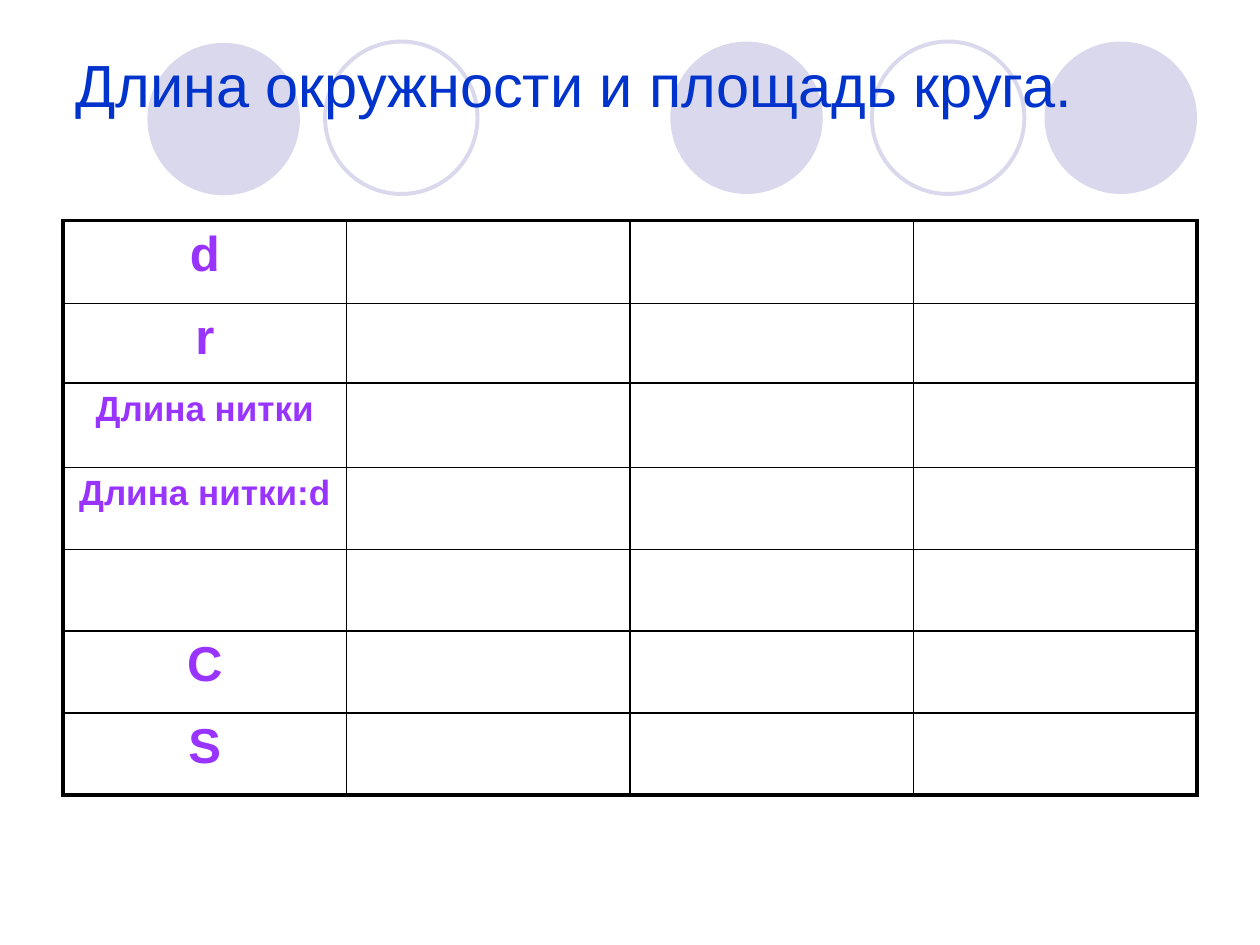
import pptx
import pptx.util
from pptx.dml.color import RGBColor
from pptx.enum.shapes import MSO_SHAPE
from pptx.enum.text import MSO_ANCHOR, PP_ALIGN
from pptx.oxml.ns import qn
from lxml import etree

Inches, Pt = pptx.util.Inches, pptx.util.Pt

# Content
TITLE = "Длина окружности и площадь круга."
ROWS = [  # label, font size, row height
    ("d", 28, 0.66),
    ("r", 28, 0.63),
    ("Длина нитки", 20, 0.67),
    ("Длина нитки:d", 20, 0.65),
    ("", 20, 0.65),
    ("C", 28, 0.65),
    ("S", 28, 0.65),
]
COLUMNS, COLUMN_WIDTH = 4, 2.25
CIRCLES = [  # left, top, filled
    (5.32, 0.33, True),
    (8.29, 0.33, True),
    (1.17, 0.34, True),
    (6.92, 0.33, False),
    (2.58, 0.33, False),
]
DIAMETER = 1.21

LILAC = RGBColor(0xD9, 0xD8, 0xEC)
BLUE = RGBColor(0x00, 0x33, 0xCC)
PURPLE = RGBColor(0x99, 0x33, 0xFF)
BLACK = RGBColor(0x00, 0x00, 0x00)
THIN, THICK = Pt(1), Pt(2.25)


def format_text(p, size, color, bold):
    p.font.color.rgb = color
    for name, value in {"name": "Arial", "size": Pt(size), "bold": bold}.items():
        setattr(p.font, name, value)


def set_borders(cell, widths):
    tcPr = cell._tc.get_or_add_tcPr()
    for i, (side, width) in enumerate(widths.items()):
        ln = etree.Element(qn("a:ln" + side), w=str(width))
        fill = etree.SubElement(ln, qn("a:solidFill"))
        etree.SubElement(fill, qn("a:srgbClr"), val=str(BLACK))
        tcPr.insert(i, ln)  # borders come before the cell fill


prs = pptx.Presentation()
prs.slide_width, prs.slide_height = Inches(10), Inches(7.5)
s = prs.slides.add_slide(prs.slide_layouts[5])

# Background circles
for left, top, filled in CIRCLES:
    sp = s.shapes.add_shape(MSO_SHAPE.OVAL, Inches(left), Inches(top),
                            Inches(DIAMETER), Inches(DIAMETER))
    sp.shadow.inherit = False
    if filled:
        sp.fill.solid()
        sp.fill.fore_color.rgb = LILAC
        sp.line.fill.background()
    else:
        sp.fill.background()
        sp.line.color.rgb = LILAC
        sp.line.width = THICK

# Title, in front of the circles
title = s.shapes.title
s.shapes.element.append(title.element)
title.left, title.top = Inches(0.5), Inches(0.3)
title.width, title.height = Inches(9), Inches(1.25)
tf = title.text_frame
tf.text = TITLE
tf.vertical_anchor = MSO_ANCHOR.TOP
tf.margin_top = Inches(0.08)
p = tf.paragraphs[0]
p.alignment = PP_ALIGN.LEFT
format_text(p, 34, BLUE, False)

# Table
frame = s.shapes.add_table(len(ROWS), COLUMNS, Inches(0.5), Inches(1.75),
                           Inches(COLUMNS * COLUMN_WIDTH),
                           Inches(sum(height for _, _, height in ROWS)))
table = frame.table
table.first_row = table.horz_banding = False
for column in table.columns:
    column.width = Inches(COLUMN_WIDTH)
for i, (label, size, height) in enumerate(ROWS):
    table.rows[i].height = Inches(height)
    for j in range(COLUMNS):
        cell = table.cell(i, j)
        cell.fill.background()
        set_borders(cell, {
            "L": THICK if j == 0 else THIN,
            "R": THICK if j == COLUMNS - 1 else THIN,
            "T": THICK if i == 0 else THIN,
            "B": THICK if i == len(ROWS) - 1 else THIN,
        })
    if label:
        cell = table.cell(i, 0)
        cell.text = label
        p = cell.text_frame.paragraphs[0]
        p.alignment = PP_ALIGN.CENTER
        format_text(p, size, PURPLE, True)

prs.save("out.pptx")
